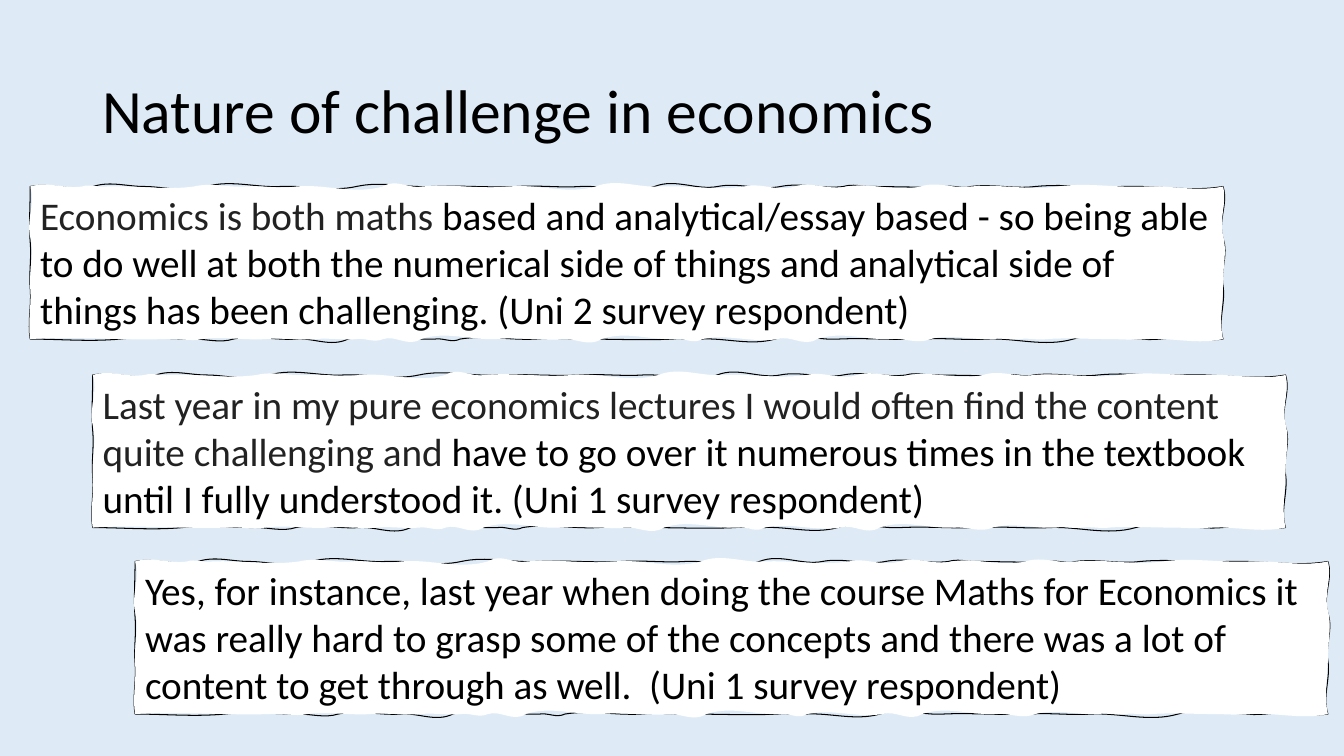
from dataclasses import dataclass

from lxml.etree import SubElement
from pptx import Presentation
from pptx.dml.color import RGBColor as RGB
from pptx.enum.text import MSO_ANCHOR as ANCHOR, MSO_AUTO_SIZE as AUTO, PP_ALIGN as ALIGN
from pptx.oxml.ns import qn
from pptx.util import Pt


@dataclass(frozen=True)
class Theme:
    """Colours, font and type sizes of the slide."""
    back: RGB = RGB.from_string("DEEBF7")
    card: RGB = RGB.from_string("FFFFFF")
    ink: RGB = RGB.from_string("000000")
    soft: RGB = RGB.from_string("222222")
    font: str = "Calibri"
    title: int = 44
    body: int = 28
    line: float = 0.75


@dataclass(frozen=True)
class Edge:
    """One wavy side: its opening lean, then where each wave ends and how far it leans."""
    lean: int
    ends: tuple
    bumps: tuple


CARD_W, CARD_H = 852, 109

OUTLINE = (
    Edge(3, (45, 81, 126, 179, 233, 287, 348, 393, 446, 491, 536, 581, 600, 654, 672, 718, 780, 852),
         (4, 0, 5, 1, 4, 1, 1, 1, 6, 3, 3, 2, 0, 1, 2, 2, 1, 4)),
    Edge(-4, (37, 71, 109), (-4, -2, -4)),
    Edge(-2, (807, 745, 683, 639, 577, 532, 479, 459, 397, 361, 307, 289, 227, 190, 145, 117, 64, 0),
         (-2, -6, -1, -1, -1, -5, -1, -1, 0, -1, -3, -1, -6, -1, -3, 0, -2, 0)),
    Edge(2, (73, 40, 0), (1, 1, 0)),
)
PAPER = (
    Edge(4, (37, 55, 117, 154, 190, 252, 280, 342, 404, 449, 510, 546, 583, 636, 672, 734, 796, 852),
         (2, 1, 3, 1, 2, 6, 2, 2, 6, 1, 3, 4, 3, 4, 2, 3, 1, 4)),
    Edge(-3, (35, 68, 109), (-3, 0, -3)),
    Edge(-4, (798, 771, 726, 707, 688, 643, 615, 562, 534, 480, 461, 408,
              380, 361, 333, 279, 252, 233, 204, 168, 123, 96, 0),
         (-1, 0, -1, -1, -1, -4, -1, -6, -3, -4, -1, -6, -1, 0, -1, -6, -3, -1, -1, -1, -2, -1, -2)),
    Edge(2, (73, 36, 0), (1, 3, 4)),
)

QUOTES = (
    (21.6, 133.2, "Economics is both maths ",
     "based and analytical/essay based - so being able to do well at both the numerical side "
     "of things and analytical side of things has been challenging. (Uni 2 survey respondent)"),
    (66.24, 267.84,
     "Last year in my pure economics lectures I would often find the content quite challenging and ",
     "have to go over it numerous times in the textbook until I fully understood it. "
     "(Uni 1 survey respondent)"),
    (96.48, 401.04, "",
     "Yes, for instance, last year when doing the course Maths for Economics it was really hard to "
     "grasp some of the concepts and there was a lot of content to get through as well.  "
     "(Uni 1 survey respondent)"),
)


def waves(edges):
    """Yield the three curve points of each wave, clockwise from the top left."""
    sides = ((0, 0, True), (0, CARD_W, False), (CARD_W, CARD_H, True), (CARD_H, 0, False))
    for edge, (at, base, across) in zip(edges, sides):
        lean = edge.lean
        for end, bump in zip(edge.ends, edge.bumps):
            third = (end - at) / 3
            curve = ((at + third, base - lean), (end - third, base + bump), (end, base))
            yield curve if across else [(x, y) for y, x in curve]
            at, lean = end, bump


class Deck:
    """Draws the elements of the current slide in one style."""

    def __init__(self, prs, theme):
        self.theme = theme
        self.s = prs.slides.add_slide(prs.slide_layouts[6])
        fill = self.s.background.fill
        fill.solid()
        fill.fore_color.rgb = theme.back

    def set_text(self, tf, size, runs):
        """Fill a text frame with one left-aligned paragraph of coloured runs."""
        tf.word_wrap = True
        p = tf.paragraphs[0]
        p.alignment = ALIGN.LEFT
        p.font.name, p.font.size = self.theme.font, Pt(size)
        for text, color in runs:
            if text:
                r = p.add_run()
                r.text = text
                r.font.color.rgb = color
        return p

    def title(self, x, y, w, h, text):
        """Add the slide title."""
        tf = self.s.shapes.add_textbox(Pt(x), Pt(y), Pt(w), Pt(h)).text_frame
        tf.vertical_anchor = ANCHOR.MIDDLE
        self.set_text(tf, self.theme.title, [(text, self.theme.ink)]).line_spacing = 0.9

    def trace(self, outlines, edges, **paint):
        """Append one closed wavy outline to a shape's list of outlines."""
        wavy = SubElement(outlines, qn("a:path"), w=str(Pt(CARD_W)), h=str(Pt(CARD_H)), **paint)
        start = SubElement(wavy, qn("a:moveTo"))
        SubElement(start, qn("a:pt"), x="0", y="0")
        for curve in waves(edges):
            bez = SubElement(wavy, qn("a:cubicBezTo"))
            for x, y in curve:
                SubElement(bez, qn("a:pt"), x=str(Pt(x)), y=str(Pt(y)))
        SubElement(wavy, qn("a:close"))

    def quote(self, x, y, lead, rest):
        """Add a torn-paper card holding one quotation."""
        t = self.theme
        corners = [(Pt(x + dx), Pt(y + dy)) for dx, dy in ((CARD_W, 0), (CARD_W, CARD_H), (0, CARD_H))]
        pen = self.s.shapes.build_freeform(Pt(x), Pt(y))
        pen.add_line_segments(corners)
        sp = pen.convert_to_shape()
        outlines = sp.element.spPr.find(".//" + qn("a:pathLst"))
        outlines.remove(outlines[0])
        self.trace(outlines, OUTLINE, fill="none")
        self.trace(outlines, PAPER, stroke="0")
        sp.shadow.inherit = False
        sp.fill.solid()
        sp.fill.fore_color.rgb = t.card
        sp.line.color.rgb = t.ink
        sp.line.width = Pt(t.line)
        tf = sp.text_frame
        tf.vertical_anchor = ANCHOR.TOP
        tf.auto_size = AUTO.SHAPE_TO_FIT_TEXT
        self.set_text(tf, t.body, [(lead, t.soft), (rest, t.ink)])


def main():
    """Build and save the slide."""
    prs = Presentation()
    prs.slide_width, prs.slide_height = Pt(960), Pt(540)
    deck = Deck(prs, Theme())
    deck.title(66, 28.8, 828, 104.4, "Nature of challenge in economics")
    for quote in QUOTES:
        deck.quote(*quote)
    prs.save("out.pptx")


if __name__ == "__main__":
    main()
